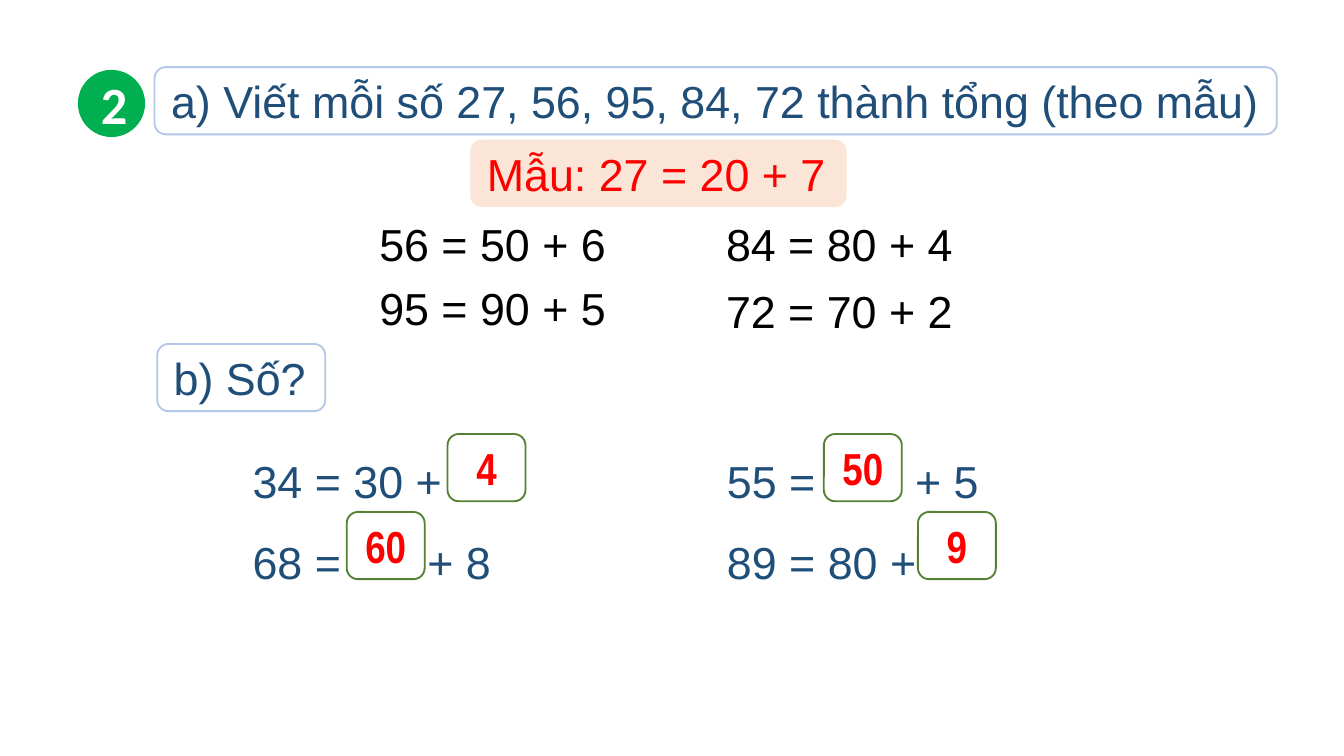
import pptx
import pptx.util
import pptx.dml.color
import pptx.enum.shapes
import pptx.enum.text
import pptx.oxml.ns
import lxml.etree

RGB = pptx.dml.color.RGBColor
KIND = pptx.enum.shapes.MSO_SHAPE
ALIGN = pptx.enum.text.PP_ALIGN

WHITE = RGB(0xFF, 0xFF, 0xFF)
BLACK = RGB(0, 0, 0)
RED = RGB(0xFF, 0, 0)
NAVY = RGB(0x1F, 0x4E, 0x79)
BLUE = RGB(0xB4, 0xC7, 0xE7)
GREEN = RGB(0x00, 0xB0, 0x50)
OLIVE = RGB(0x54, 0x82, 0x35)
PEACH = RGB(0xFB, 0xE5, 0xD6)

SCALE = 9144  # EMU per px, 100 px to the inch
HIGH = 50     # height of a one-line box


def px(num):
    return pptx.util.Emu(num * SCALE)


def add_box(slide, left, top, width, height=HIGH, fill=WHITE, line=None,
            kind=KIND.ROUNDED_RECTANGLE):
    box = slide.shapes.add_shape(kind, px(left), px(top), px(width), px(height))
    box.shadow.inherit = False
    box.fill.solid()
    box.fill.fore_color.rgb = fill
    if line is None:
        box.line.fill.background()
    else:
        box.line.color.rgb = line
        box.line.width = pptx.util.Pt(1)
    box.text_frame.vertical_anchor = pptx.enum.text.MSO_ANCHOR.MIDDLE
    return box


def add_run(para, text, color, font="Arial", size=24, bold=False):
    run = para.add_run()
    run.text = text
    run.font.name = font
    run.font.size = pptx.util.Pt(size)
    run.font.bold = bold
    run.font.color.rgb = color


def add_label(slide, text, left, top, width, color, **style):
    para = add_box(slide, left, top, width, **style).text_frame.paragraphs[0]
    para.alignment = ALIGN.LEFT
    add_run(para, text, color)


def add_badge(slide, text, left, top):
    box = add_box(slide, left, top, HIGH, fill=GREEN, kind=KIND.OVAL)
    para = box.text_frame.paragraphs[0]
    para.alignment = ALIGN.CENTER
    add_run(para, text, WHITE, "Calibri", 28, True)


def add_answer(slide, text, left, top):
    para = add_box(slide, left, top, 58, line=OLIVE).text_frame.paragraphs[0]
    para.alignment = ALIGN.CENTER
    add_run(para, text, RED, "Arial Narrow", bold=True)


def set_tabs(para, stops):
    tag = pptx.oxml.ns.qn
    tabs = lxml.etree.SubElement(para._p.get_or_add_pPr(), tag("a:tabLst"))
    for stop in stops:
        lxml.etree.SubElement(tabs, tag("a:tab"), pos=str(px(stop)), algn="l")


def add_sums(slide, rows):
    frame = add_box(slide, 117, 315, 742, 125).text_frame
    for i, (parts, stops) in enumerate(rows):
        para = frame.add_paragraph() if i else frame.paragraphs[0]
        para.alignment = ALIGN.LEFT
        para.line_spacing = 1.5
        set_tabs(para, stops)
        for part in parts:
            add_run(para, "\t" + part, NAVY)


def main():
    # Widescreen slide, 16:9
    deck = pptx.Presentation()
    deck.slide_width = px(1000)
    deck.slide_height = deck.slide_width * 9 // 16
    slide = deck.slides.add_slide(deck.slide_layouts[6])

    # Headings and worked example
    add_label(slide, "a) Viết mỗi số 27, 56, 95, 84, 72 thành tổng (theo mẫu)",
              115, 50, 835, NAVY, line=BLUE)
    add_badge(slide, "2", 58, 52)
    add_label(slide, "b) Số?", 117, 256, 125, NAVY, line=BLUE)
    add_label(slide, "Mẫu: 27 = 20 + 7", 350, 104, 280, RED, fill=PEACH)

    # Part b: sums with gaps
    add_sums(slide, [
        (("34 = 30 +", "55 =", "+ 5"), (55, 408, 548)),
        (("68 =", "+ 8", "89 = 80 +"), (55, 185, 408)),
    ])

    # Part a: solved sums
    for text, left, top in (("56 = 50 + 6", 270, 156), ("95 = 90 + 5", 270, 204),
                            ("84 = 80 + 4", 528, 156), ("72 = 70 + 2", 528, 206)):
        add_label(slide, text, left, top, 280, BLACK)

    # Part b: answers in the gaps
    for text, left, top in (("4", 333, 323), ("60", 258, 381),
                            ("50", 613, 323), ("9", 683, 381)):
        add_answer(slide, text, left, top)

    deck.save("out.pptx")


if __name__ == "__main__":
    main()
